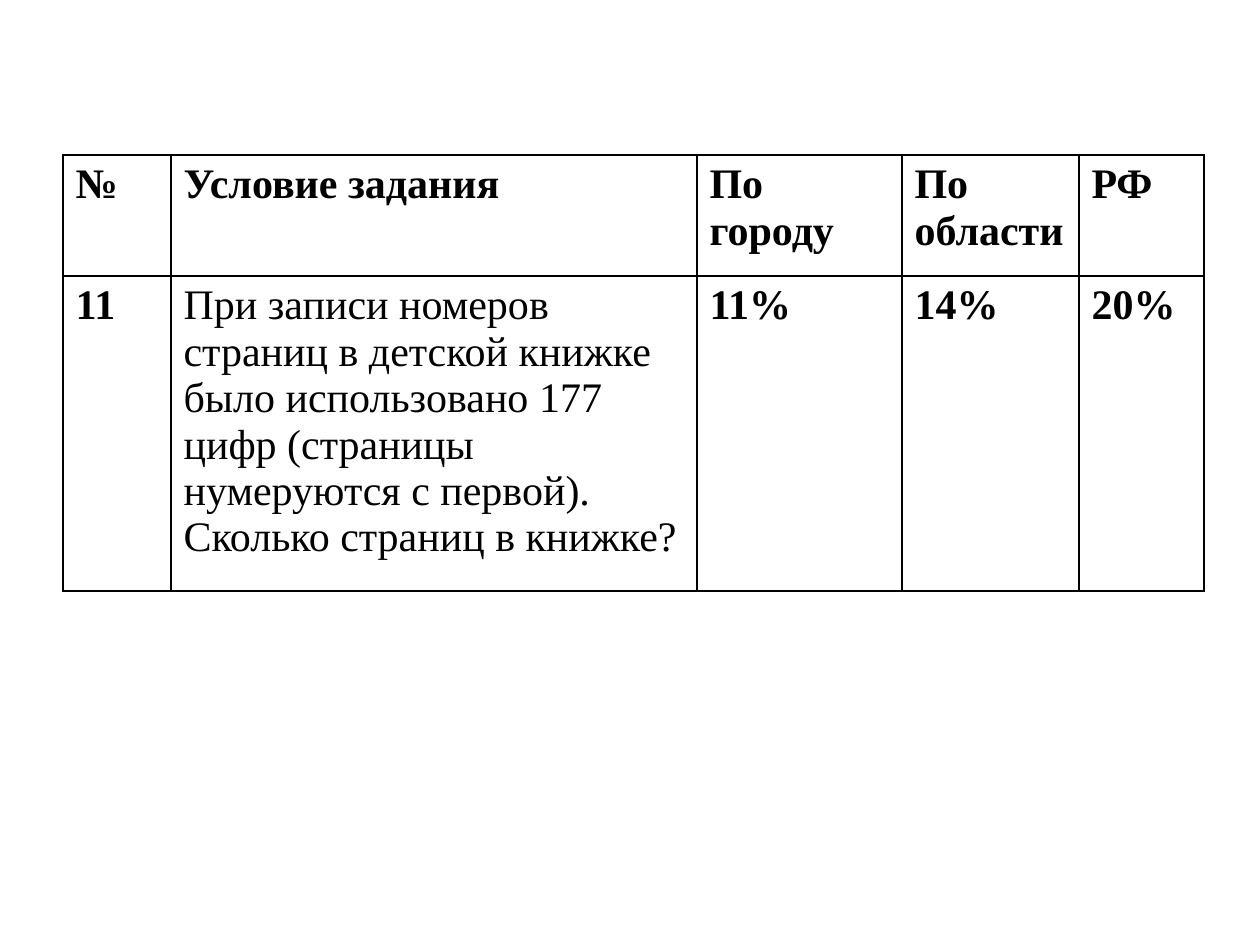
from lxml.etree import SubElement
from pptx import Presentation
from pptx.dml.color import RGBColor
from pptx.oxml.ns import qn
from pptx.util import Emu, Pt

BLACK = RGBColor(0, 0, 0)
FONT = "Times New Roman"
PX_PER_INCH = 126


def px(length):
    return Emu(round(length * 914400 / PX_PER_INCH))


def add_borders(cell, color, width):
    properties = cell._tc.get_or_add_tcPr()
    for position, side in enumerate(("lnL", "lnR", "lnT", "lnB")):
        line = SubElement(properties, qn(f"a:{side}"), w=str(width))
        properties.insert(position, line)
        fill = SubElement(line, qn("a:solidFill"))
        SubElement(fill, qn("a:srgbClr"), val=str(color))


COLUMN_WIDTHS = [108, 526, 205, 177, 125]
ROW_HEIGHTS = [121, 315]
ROWS = [
    ["№", "Условие задания", "По городу", "По области", "РФ"],
    [
        "11",
        "При записи номеров страниц в детской книжке было использовано 177 цифр "
        "(страницы нумеруются с первой). Сколько страниц в книжке?",
        "11%",
        "14%",
        "20%",
    ],
]
TASK_CELL = (1, 1)

presentation = Presentation()
presentation.slide_width = px(1260)
presentation.slide_height = px(945)
slide = presentation.slides.add_slide(presentation.slide_layouts[6])

table = slide.shapes.add_table(
    len(ROW_HEIGHTS), len(COLUMN_WIDTHS),
    px(63), px(155), px(sum(COLUMN_WIDTHS)), px(sum(ROW_HEIGHTS)),
).table
table.first_row = False
table.horz_banding = False
for column, width in zip(table.columns, COLUMN_WIDTHS):
    column.width = px(width)
for row, height in zip(table.rows, ROW_HEIGHTS):
    row.height = px(height)

for row_index, texts in enumerate(ROWS):
    for column_index, text in enumerate(texts):
        cell = table.cell(row_index, column_index)
        cell.fill.background()
        add_borders(cell, BLACK, Pt(1))
        run = cell.text_frame.paragraphs[0].add_run()
        run.text = text
        run.font.name = FONT
        run.font.size = Pt(24)
        run.font.bold = (row_index, column_index) != TASK_CELL
        run.font.color.rgb = BLACK

presentation.save("out.pptx")
